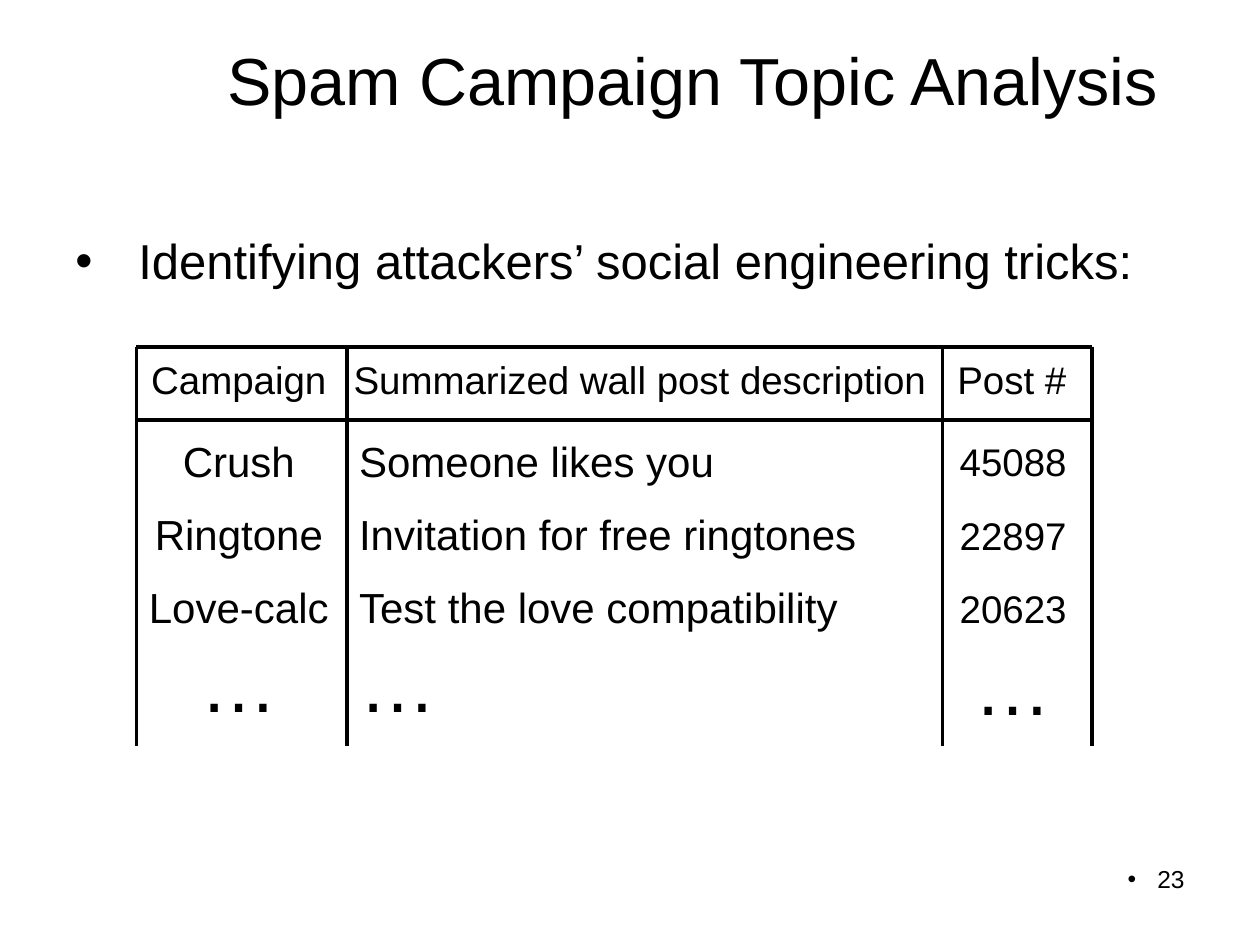
from dataclasses import dataclass

from lxml.etree import SubElement
from pptx import Presentation
from pptx.dml.color import RGBColor
from pptx.enum.shapes import MSO_CONNECTOR as Connector
from pptx.enum.text import MSO_ANCHOR as Anchor, PP_ALIGN as Align
from pptx.oxml.ns import qn
from pptx.util import Cm, Pt

BLACK = RGBColor(0, 0, 0)
FONT = "Arial"
TIGHT = 0.9
RULE_WIDTH = Pt(2)

GRID_LEFT, GRID_RIGHT = 2.75, 22.01
GRID_TOP, HEADER_BOTTOM, GRID_BOTTOM = 6.99, 8.47, 15.03
COLUMN_EDGES = (GRID_LEFT, 6.99, 19.0, GRID_RIGHT)
FIRST_ROW_TOP = 8.76
ROW_PITCH = 1.48
COUNT_DROP = 0.06


@dataclass(frozen=True)
class Label:
    text: str
    left: float
    top: float
    width: float
    height: float
    size: int
    align: Align = Align.LEFT
    anchor: Anchor = Anchor.TOP
    hanging: float = 0
    spacing: float = TIGHT


@dataclass(frozen=True)
class Campaign:
    name: str
    description: str
    posts: str
    top: float
    size: int = 24
    posts_size: int = 22
    height: float = 1.17


LABELS = [
    Label("23", 18.21, 17.35, 5.92, 1.32, 14, Align.RIGHT, hanging=0.6),
    Label("Spam Campaign Topic Analysis", 2.54, 0, 22.86, 3.18, 38,
          Align.CENTER, Anchor.MIDDLE, spacing=1),
    Label("Identifying attackers’ social engineering tricks:", 1.27, 4.65,
          22.02, 1.35, 28, hanging=1.27),
    Label("Campaign", 2.75, 7.16, 4.13, 1.09, 22, Align.CENTER),
    Label("Summarized wall post description", 6.88, 7.16, 12.09, 1.09, 22),
    Label("Post #", 19.05, 7.16, 2.75, 1.09, 22),
]

CAMPAIGNS = [
    Campaign("Crush", "Someone likes you", "45088", FIRST_ROW_TOP),
    Campaign("Ringtone", "Invitation for free ringtones", "22897",
             FIRST_ROW_TOP + ROW_PITCH),
    Campaign("Love-calc", "Test the love compatibility", "20623",
             FIRST_ROW_TOP + 2 * ROW_PITCH),
    Campaign("…", "…", "…", 12.9, 44, 44, 1.96),
]


def draw_label(slide, label: Label) -> None:
    box = slide.shapes.add_textbox(Cm(label.left), Cm(label.top),
                                   Cm(label.width), Cm(label.height))
    frame = box.text_frame
    frame.text = label.text
    frame.word_wrap = True
    frame.vertical_anchor = label.anchor
    paragraph = frame.paragraphs[0]
    paragraph.alignment = label.align
    paragraph.line_spacing = label.spacing
    if label.hanging:
        properties = paragraph._p.get_or_add_pPr()
        properties.set("marL", str(Cm(label.hanging)))
        properties.set("indent", str(-Cm(label.hanging)))
        SubElement(properties, qn("a:buFont")).set("typeface", FONT)
        SubElement(properties, qn("a:buChar")).set("char", "•")
    for run in paragraph.runs:
        run.font.name = FONT
        run.font.size = Pt(label.size)
        run.font.color.rgb = BLACK


def draw_campaign(slide, campaign: Campaign) -> None:
    top, height = campaign.top, campaign.height
    draw_label(slide, Label(campaign.name, 2.75, top, 4.13, height,
                            campaign.size, Align.CENTER))
    draw_label(slide, Label(campaign.description, 6.99, top, 12.01, height,
                            campaign.size))
    draw_label(slide, Label(campaign.posts, 19.05, top + COUNT_DROP, 2.75,
                            height, campaign.posts_size, Align.CENTER))


def draw_rule(slide, x1: float, y1: float, x2: float, y2: float) -> None:
    rule = slide.shapes.add_connector(Connector.STRAIGHT, Cm(x1), Cm(y1),
                                      Cm(x2), Cm(y2))
    rule.line.color.rgb = BLACK
    rule.line.width = RULE_WIDTH
    SubElement(rule._element.spPr, qn("a:effectLst"))


def main() -> None:
    deck = Presentation()
    deck.slide_width = Cm(25.4)
    deck.slide_height = Cm(19.05)
    slide = deck.slides.add_slide(deck.slide_layouts[6])
    for y in (GRID_TOP, HEADER_BOTTOM):
        draw_rule(slide, GRID_LEFT, y, GRID_RIGHT, y)
    for x in COLUMN_EDGES:
        draw_rule(slide, x, GRID_TOP, x, GRID_BOTTOM)
    for label in LABELS:
        draw_label(slide, label)
    for campaign in CAMPAIGNS:
        draw_campaign(slide, campaign)
    deck.save("out.pptx")


if __name__ == "__main__":
    main()
